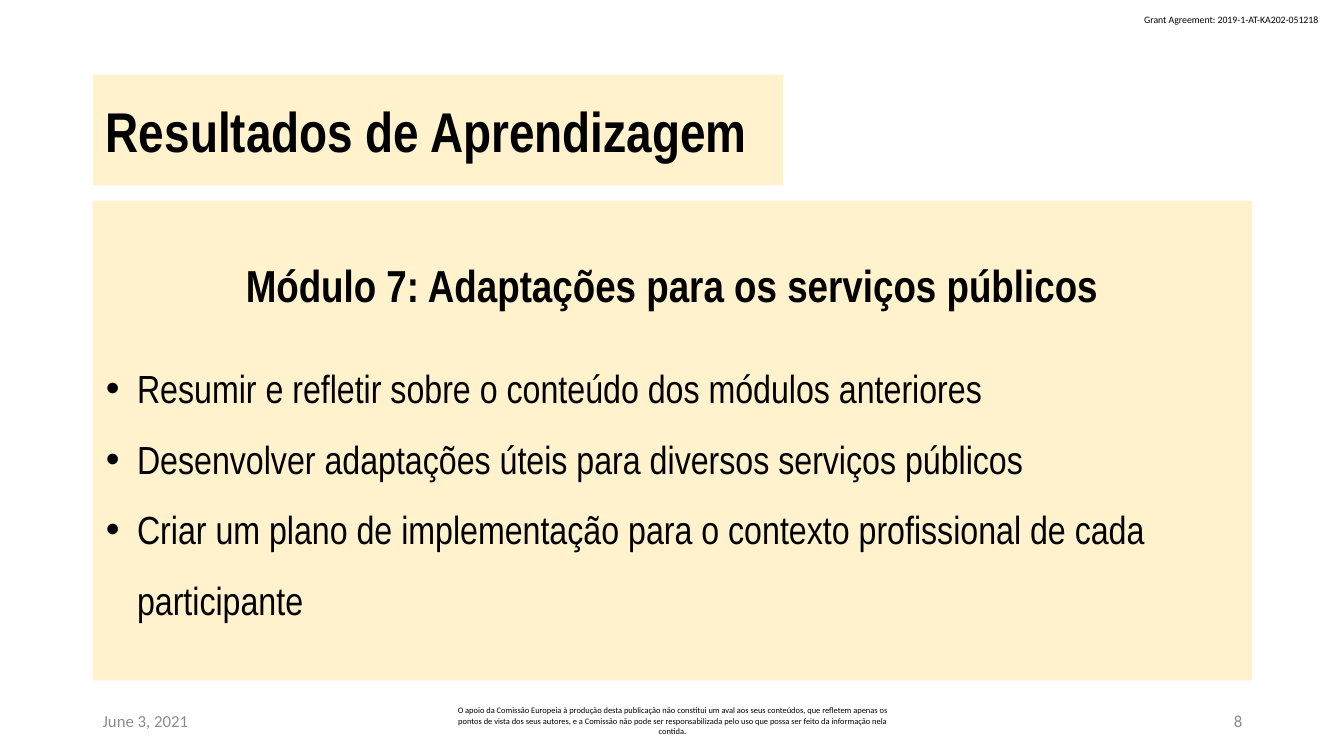
from lxml.etree import SubElement
from pptx import Presentation
from pptx.dml.color import RGBColor
from pptx.enum.shapes import MSO_SHAPE as Shape
from pptx.enum.text import MSO_ANCHOR as Anchor, MSO_AUTO_SIZE as AutoSize, PP_ALIGN as Align
from pptx.oxml.ns import qn
from pptx.util import Inches, Pt

COLORS = {"panel": "FFF2CC", "text": "000000", "muted": "8C8C8C"}
HEADING_FONT, SMALL_FONT = "Arial Narrow", "Calibri"
LEFT = 0.92
OUTCOMES = [
    "Resumir e refletir sobre o conteúdo dos módulos anteriores",
    "Desenvolver adaptações úteis para diversos serviços públicos",
    "Criar um plano de implementação para o contexto profissional de cada participante",
]
DISCLAIMER = (
    "O apoio da Comissão Europeia à produção desta publicação não constitui um aval "
    "aos seus conteúdos, que refletem apenas os pontos de vista dos seus autores, e a "
    "Comissão não pode ser responsabilizada pelo uso que possa ser feito da informação "
    "nela contida."
)


class SlideBuilder:
    def __init__(self, slide):
        self.slide = slide

    def style(self, paragraph, size, name=HEADING_FONT, color="text", bold=False, align=Align.LEFT):
        paragraph.alignment = align
        font = paragraph.font
        font.size, font.name, font.bold = Pt(size), name, bold
        font.color.rgb = RGBColor.from_string(COLORS[color])

    def panel(self, shape):
        """Give a shape the cream fill and the shared text margins."""
        shape.fill.solid()
        shape.fill.fore_color.rgb = RGBColor.from_string(COLORS["panel"])
        frame = shape.text_frame
        frame.word_wrap, frame.auto_size = True, AutoSize.NONE
        frame.vertical_anchor = Anchor.MIDDLE
        frame.margin_left = frame.margin_right = Inches(0.13)
        frame.margin_top = frame.margin_bottom = Inches(0.07)
        return frame

    def title(self, text, x, y, w, h):
        title = self.slide.shapes.title
        title.left, title.top, title.width, title.height = map(Inches, (x, y, w, h))
        frame = self.panel(title)
        frame.text = text
        self.style(frame.paragraphs[0], 40, bold=True)

    def outcomes(self, heading, items, x, y, w, h):
        box = self.slide.shapes.add_shape(Shape.RECTANGLE, *map(Inches, (x, y, w, h)))
        box.shadow.inherit = False
        box.line.fill.background()
        frame = self.panel(box)
        frame.text = heading
        module = frame.paragraphs[0]
        module.space_after = Pt(21)
        self.style(module, 32, bold=True, align=Align.CENTER)
        for item in items:
            self.bullet(frame.add_paragraph(), item)

    def bullet(self, paragraph, text):
        paragraph.text = text
        paragraph.line_spacing = 1.5
        props = paragraph._p.get_or_add_pPr()
        props.set("marL", str(Inches(0.31)))
        props.set("indent", str(Inches(-0.31)))
        SubElement(props, qn("a:buFont"), typeface="Arial")
        SubElement(props, qn("a:buChar"), char="•")
        self.style(paragraph, 28)

    def note(self, text, x, y, w, h, size, color="text", align=Align.LEFT, wrap=True):
        box = self.slide.shapes.add_textbox(*map(Inches, (x, y, w, h)))
        frame = box.text_frame
        frame.word_wrap = wrap
        frame.vertical_anchor = Anchor.MIDDLE
        frame.text = text
        self.style(frame.paragraphs[0], size, SMALL_FONT, color, align=align)


def main():
    deck = Presentation()
    deck.slide_width, deck.slide_height = Inches(13.33), Inches(7.5)
    builder = SlideBuilder(deck.slides.add_slide(deck.slide_layouts[5]))

    # Header
    builder.note("Grant Agreement: 2019-1-AT-KA202-051218", 11.25, 0.08, 1.97, 0.22, 7, wrap=False)
    builder.title("Resultados de Aprendizagem", LEFT, 0.74, 6.85, 1.1)

    # Learning outcomes
    builder.outcomes("Módulo 7: Adaptações para os serviços públicos", OUTCOMES, LEFT, 1.99, 11.5, 4.76)

    # Footer
    footer_top, footer_height = 6.95, 0.4
    builder.note("June 3, 2021", LEFT, footer_top, 3, footer_height, 12, "muted")
    builder.note(DISCLAIMER, 4.42, footer_top, 4.5, footer_height, 6, align=Align.CENTER)
    builder.note("8", 9.42, footer_top, 3, footer_height, 12, "muted", Align.RIGHT)

    deck.save("out.pptx")


if __name__ == "__main__":
    main()
